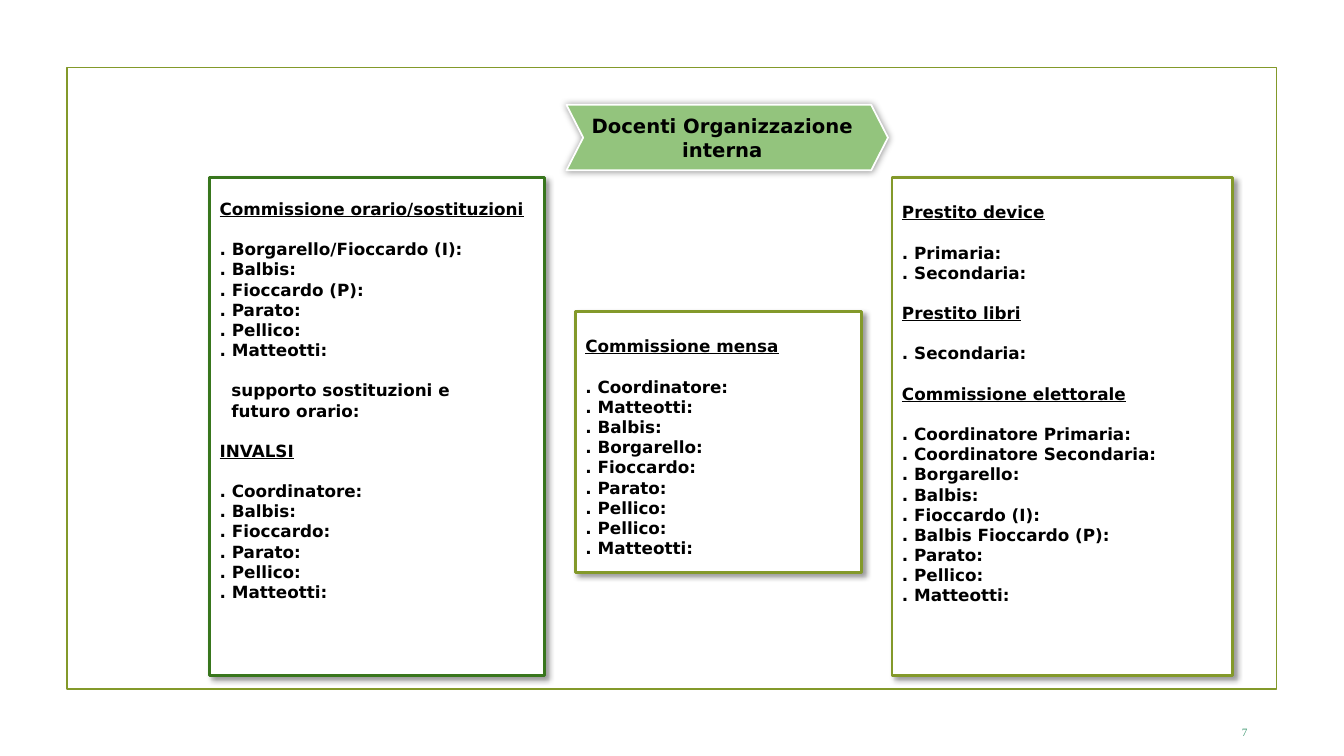
from dataclasses import dataclass

from lxml import etree
from pptx import Presentation
from pptx.dml.color import RGBColor
from pptx.enum.shapes import MSO_SHAPE
from pptx.enum.text import MSO_ANCHOR, MSO_AUTO_SIZE, PP_ALIGN
from pptx.oxml.ns import qn
from pptx.util import Pt

RECTANGLE, CHEVRON = MSO_SHAPE.RECTANGLE, MSO_SHAPE.CHEVRON
TOP, MIDDLE = MSO_ANCHOR.TOP, MSO_ANCHOR.MIDDLE
LEFT, CENTER = PP_ALIGN.LEFT, PP_ALIGN.CENTER
NO_AUTOFIT = MSO_AUTO_SIZE.NONE
TITLE_ONLY = 5


@dataclass(frozen=True)
class Theme:
    font: str = "DejaVu Sans"
    number_font: str = "Times New Roman"
    title_size: float = 14
    body_size: float = 12
    number_size: float = 8
    line_pitch: float = 14.4
    text: str = "000000"
    paper: str = "FFFFFF"
    olive: str = "83992A"
    forest: str = "38761D"
    banner: str = "93C47D"
    number: str = "3C9770"
    shadow: str = "000000"


class SlideBuilder:
    def __init__(self, slide, theme):
        self.slide = slide
        self.theme = theme

    def outline(self, kind, box, line, weight, fill=None, shadow=None):
        shape = self.slide.shapes.add_shape(kind, *map(Pt, box))
        shape.shadow.inherit = False
        if fill:
            shape.fill.solid()
            shape.fill.fore_color.rgb = RGBColor.from_string(fill)
        else:
            shape.fill.background()
        shape.line.color.rgb = RGBColor.from_string(line)
        shape.line.width = Pt(weight)
        if shadow:
            self.cast_shadow(shape, *shadow)
        return shape

    def cast_shadow(self, shape, blur, distance, angle):
        effects = shape.element.spPr.find(qn("a:effectLst"))
        outer = etree.SubElement(
            effects, qn("a:outerShdw"), blurRad=str(Pt(blur)),
            dist=str(Pt(distance)), dir=str(angle * 60000),
            algn="ctr", rotWithShape="0")
        color = etree.SubElement(outer, qn("a:srgbClr"), val=self.theme.shadow)
        etree.SubElement(color, qn("a:alpha"), val="40000")

    def frame_text(self, shape, margins, anchor=TOP):
        frame = shape.text_frame
        frame.word_wrap = True
        frame.auto_size = NO_AUTOFIT
        frame.vertical_anchor = anchor
        (frame.margin_left, frame.margin_top,
         frame.margin_right, frame.margin_bottom) = map(Pt, margins)
        return frame

    def style(self, paragraph, size, font, color, bold=False, underline=False):
        for run in paragraph.runs:
            run.font.size = Pt(size)
            run.font.name = font
            run.font.bold = bold
            run.font.underline = underline
            run.font.color.rgb = RGBColor.from_string(color)

    def title(self, lines, box):
        theme = self.theme
        banner = self.outline(CHEVRON, box, theme.paper, 1.25, theme.banner, (5, 0, 0))
        banner.adjustments[0] = 0.256
        title = self.slide.shapes.title
        title.left, title.top, title.width, title.height = map(Pt, box)
        title.element.getparent().append(title.element)
        frame = self.frame_text(title, (0, 3.6, 7, 3.6), MIDDLE)
        frame.text = "\n".join(lines)
        for paragraph in frame.paragraphs:
            paragraph.alignment = CENTER
            paragraph.space_before = Pt(0)
            paragraph.line_spacing = 1.0
            self.style(paragraph, theme.title_size, theme.font, theme.text, bold=True)

    def panel(self, sections, box, line, top_margin=17.6):
        theme = self.theme
        shape = self.outline(RECTANGLE, box, line, 2, theme.paper, (4, 3, 45))
        frame = self.frame_text(shape, (7.2, top_margin, 7.2, 3.6))
        rows = []
        for heading, entries in sections:
            if heading:
                rows.append((heading, True, True, 0))
            indent = 0 if heading else 8.4
            rows += [(entry, False, position == 0, indent)
                     for position, entry in enumerate(entries)]
        frame.text = "\n".join(row[0] for row in rows)
        for index, (paragraph, row) in enumerate(zip(frame.paragraphs, rows)):
            _, is_heading, opens_group, indent = row
            paragraph.alignment = LEFT
            paragraph.line_spacing = Pt(theme.line_pitch)
            if opens_group and index:
                paragraph.space_before = Pt(theme.line_pitch)
            if indent:
                paragraph._p.get_or_add_pPr().set("marL", str(Pt(indent)))
            self.style(paragraph, theme.body_size, theme.font, theme.text,
                       bold=True, underline=is_heading)

    def page_number(self, number, box):
        theme = self.theme
        label = self.slide.shapes.add_textbox(*map(Pt, box))
        frame = self.frame_text(label, (0, 0, 0, 0))
        frame.text = number
        self.style(frame.paragraphs[0], theme.number_size, theme.number_font, theme.number)


SCHEDULE = [
    ("Commissione orario/sostituzioni", [
        ". Borgarello/Fioccardo (I):", ". Balbis:", ". Fioccardo (P):",
        ". Parato:", ". Pellico:", ". Matteotti:"]),
    (None, ["supporto sostituzioni e", "futuro orario:"]),
    ("INVALSI", [
        ". Coordinatore:", ". Balbis:", ". Fioccardo:",
        ". Parato:", ". Pellico:", ". Matteotti:"]),
]
LOANS_AND_ELECTIONS = [
    ("Prestito device", [". Primaria:", ". Secondaria:"]),
    ("Prestito libri", [". Secondaria:"]),
    ("Commissione elettorale", [
        ". Coordinatore Primaria:", ". Coordinatore Secondaria:",
        ". Borgarello:", ". Balbis:", ". Fioccardo (I):",
        ". Balbis Fioccardo (P):", ". Parato:", ". Pellico:", ". Matteotti:"]),
]
CANTEEN = [
    ("Commissione mensa", [
        ". Coordinatore:", ". Matteotti:", ". Balbis:", ". Borgarello:",
        ". Fioccardo:", ". Parato:", ". Pellico:", ". Pellico:", ". Matteotti:"]),
]


def main():
    deck = Presentation()
    deck.slide_width, deck.slide_height = Pt(960), Pt(540)
    theme = Theme()
    page = SlideBuilder(deck.slides.add_slide(deck.slide_layouts[TITLE_ONLY]), theme)

    page.outline(RECTANGLE, (47.8, 48.2, 864, 444), theme.olive, 1.25)
    page.page_number("7", (887, 518.4, 34, 16))
    page.title(["Docenti Organizzazione", "interna"], (404.6, 74.9, 229.7, 46.8))
    page.panel(SCHEDULE, (149.8, 126.7, 239, 355.7), theme.forest, top_margin=15.2)
    page.panel(LOANS_AND_ELECTIONS, (637.2, 126.7, 243.4, 355.7), theme.olive)
    page.panel(CANTEEN, (411.1, 222.5, 204.5, 186.5), theme.olive)

    deck.save("out.pptx")


if __name__ == "__main__":
    main()
